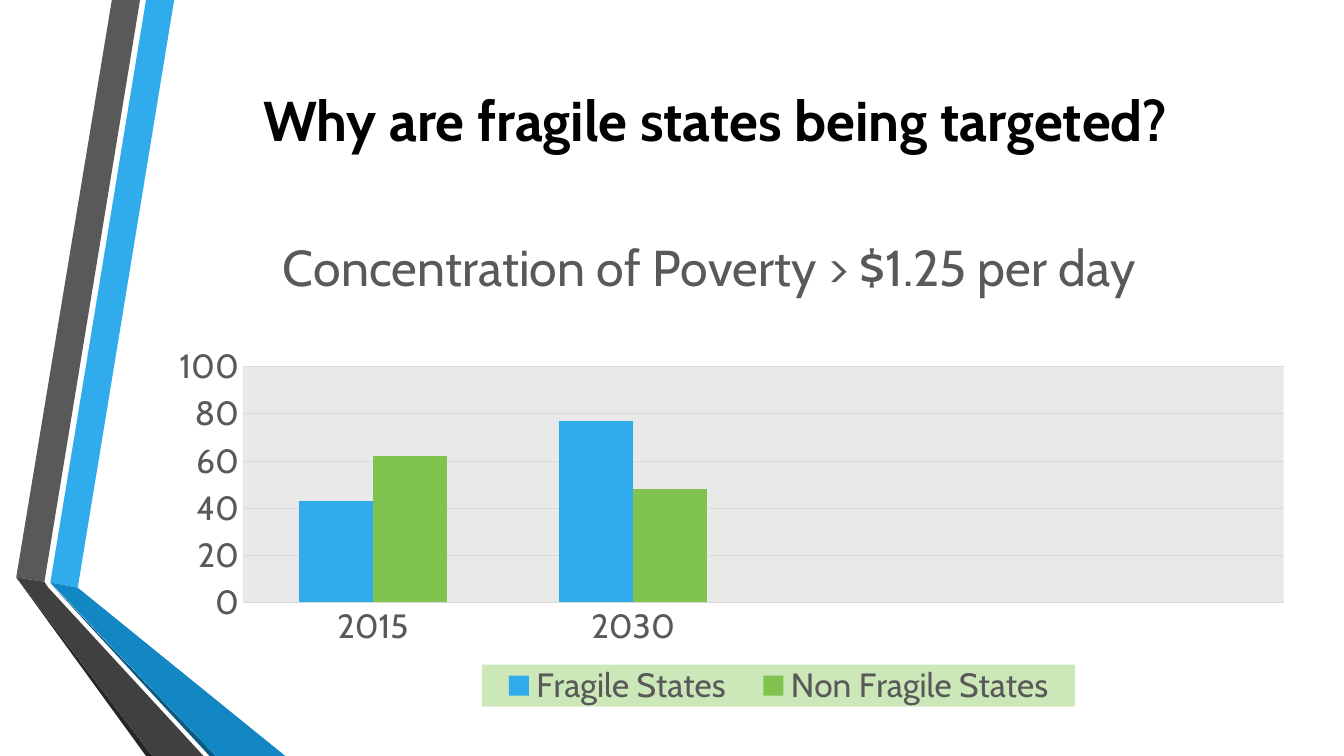
import pptx
import pptx.chart.data
import pptx.dml.color
import pptx.enum.chart
import pptx.enum.text
import pptx.oxml
import pptx.oxml.ns
import pptx.util
from pptx.util import Cm

FONT = "Cabin"
COLOURS = {
    "title": "000000",
    "text": "595959",
    "grid": "D9D9D9",
    "plot": "E9E9E9",
    "legend": "CCE8B9",
    "fragile": "30ACEC",
    "non_fragile": "80C34F",
    "blue_fold": "1287C3",
    "blue_edge": "0C5A82",
    "grey_fold": "404040",
    "grey_edge": "262626",
}
# Corner points in centimetres, from back to front
RIBBONS = [
    ("fragile", [(1.27, 14.68), (1.96, 14.81), (4.39, 0), (3.68, 0)]),
    ("text", [(3.53, 0), (2.82, 0), (0.41, 14.55), (1.12, 14.66)]),
    ("grey_edge", [(0.41, 14.55), (3.68, 19.05), (3.84, 19.05)]),
    ("blue_edge", [(1.27, 14.7), (5.28, 19.05), (5.44, 19.05)]),
    ("blue_fold", [(1.27, 14.68), (5.44, 19.05), (7.19, 19.05), (1.96, 14.81)]),
    ("grey_fold", [(5.13, 19.05), (1.22, 14.81), (1.12, 14.66), (0.41, 14.55),
                   (3.84, 19.05)]),
]
YEARS = ["2015", "2030", "", ""]
SERIES = [
    ("Fragile States", [43, 77, None, None], "fragile"),
    ("Non Fragile States", [62, 48, None, None], "non_fragile"),
]


def rgb(name):
    return pptx.dml.color.RGBColor.from_string(COLOURS[name])


def style_font(font, size, colour, bold=False):
    font.name = FONT
    font.size = pptx.util.Pt(size)
    font.bold = bold
    font.color.rgb = rgb(colour)


def fill_solid(shape, colour):
    shape.fill.solid()
    shape.fill.fore_color.rgb = rgb(colour)


def add_ribbon(slide, colour, points):
    corners = [(Cm(x), Cm(y)) for x, y in points]
    builder = slide.shapes.build_freeform(*corners[0])
    builder.add_line_segments(corners[1:], close=True)
    ribbon = builder.convert_to_shape()
    ribbon.shadow.inherit = False
    fill_solid(ribbon, colour)
    ribbon.line.fill.background()


def add_title(slide, text):
    box = slide.shapes.add_textbox(Cm(4.11), Cm(0.56), Cm(27.84), Cm(4.88))
    frame = box.text_frame
    frame.word_wrap = True
    frame.vertical_anchor = pptx.enum.text.MSO_ANCHOR.MIDDLE
    paragraph = frame.paragraphs[0]
    paragraph.alignment = pptx.enum.text.PP_ALIGN.CENTER
    run = paragraph.add_run()
    run.text = text
    style_font(run.font, 40, "title", bold=True)


def chart_xml(content):
    """Parse one chart element, given as its tag and inner markup."""
    tag, inner = content
    namespaces = pptx.oxml.ns.nsdecls("c", "a")
    return pptx.oxml.parse_xml(f"<c:{tag} {namespaces}>{inner}</c:{tag}>")


def place(element, inner=False, **fractions):
    """Set a manual layout in fractions of the chart's size."""
    for old in element.findall(pptx.oxml.ns.qn("c:layout")):
        element.remove(old)
    parts = ['<c:layoutTarget val="inner"/>'] if inner else []
    parts += [f'<c:{key}Mode val="edge"/>' for key in "xy"]
    parts += [f'<c:{key} val="{value}"/>' for key, value in fractions.items()]
    markup = "<c:manualLayout>" + "".join(parts) + "</c:manualLayout>"
    layout = chart_xml(("layout", markup))
    overlay = element.find(pptx.oxml.ns.qn("c:overlay"))
    if overlay is None:
        element.insert(0, layout)
    else:
        overlay.addprevious(layout)


def area_fill(colour):
    markup = f'<a:solidFill><a:srgbClr val="{COLOURS[colour]}"/></a:solidFill>'
    return chart_xml(("spPr", markup + "<a:ln><a:noFill/></a:ln>"))


def style_axis(axis):
    axis.major_tick_mark = pptx.enum.chart.XL_TICK_MARK.NONE
    axis.minor_tick_mark = pptx.enum.chart.XL_TICK_MARK.NONE
    axis.format.line.fill.background()
    style_font(axis.tick_labels.font, 24, "text")


def add_legend(chart):
    chart.has_legend = True
    legend = chart.legend
    legend.position = pptx.enum.chart.XL_LEGEND_POSITION.BOTTOM
    legend.include_in_layout = False
    style_font(legend.font, 24, "text")
    element = legend._element
    place(element, x=0.27, y=0.88, w=0.54, h=0.08)
    element.find(pptx.oxml.ns.qn("c:overlay")).addnext(area_fill("legend"))


def add_chart_title(chart, text):
    chart.has_title = True
    run = chart.chart_title.text_frame.paragraphs[0].add_run()
    run.text = text
    style_font(run.font, 36, "text")
    place(chart.chart_title._element, x=0.08, y=0.04)


def add_poverty_chart(slide):
    data = pptx.chart.data.CategoryChartData()
    data.categories = YEARS
    for name, values, _ in SERIES:
        data.add_series(name, values)
    chart = slide.shapes.add_chart(
        pptx.enum.chart.XL_CHART_TYPE.COLUMN_CLUSTERED,
        Cm(4.52), Cm(5.08), Cm(27.84), Cm(13.26), data).chart
    style_font(chart.font, 10, "title")
    add_chart_title(chart, "Concentration of Poverty > $1.25 per day")
    add_legend(chart)

    plot = chart.plots[0]
    plot.gap_width = 150
    plot.overlap = 0
    plot.vary_by_categories = False
    for series, (_, _, colour) in zip(plot.series, SERIES):
        fill_solid(series.format, colour)

    style_axis(chart.category_axis)
    value_axis = chart.value_axis
    style_axis(value_axis)
    value_axis.minimum_scale, value_axis.maximum_scale = 0, 100
    value_axis.major_unit = 20
    grid_line = value_axis.major_gridlines.format.line
    grid_line.color.rgb = rgb("grid")
    grid_line.width = pptx.util.Pt(0.75)

    plot_area = chart._chartSpace.chart.plotArea
    place(plot_area, inner=True, x=0.057, y=0.314, w=0.948, h=0.448)
    plot_area.append(area_fill("plot"))


def main():
    presentation = pptx.Presentation()
    presentation.slide_width = Cm(33.87)
    presentation.slide_height = Cm(19.05)
    slide = presentation.slides.add_slide(presentation.slide_layouts[6])
    for colour, points in RIBBONS:
        add_ribbon(slide, colour, points)
    add_title(slide, "Why are fragile states being targeted?")
    add_poverty_chart(slide)
    presentation.save("out.pptx")


if __name__ == "__main__":
    main()
